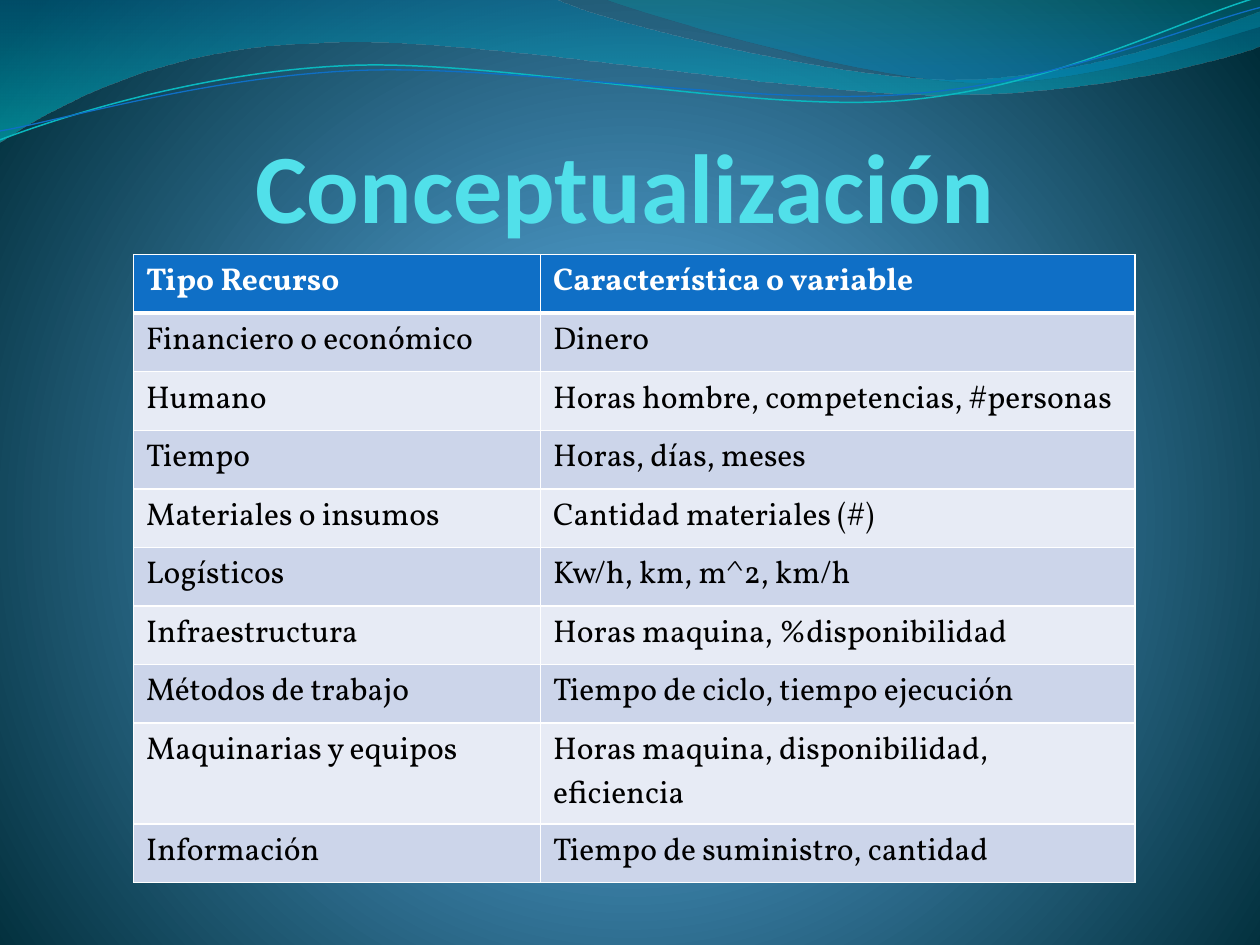
import math

from lxml import etree
from pptx import Presentation
from pptx import util as u
from pptx.dml.color import RGBColor
from pptx.enum import text as t
from pptx.oxml import ns

TITLE = "Conceptualización"
ROWS = [
    ("Tipo Recurso", "Característica o variable"),
    ("Financiero o económico", "Dinero"),
    ("Humano", "Horas hombre, competencias, #personas"),
    ("Tiempo", "Horas, días, meses"),
    ("Materiales o insumos", "Cantidad materiales (#)"),
    ("Logísticos", "Kw/h, km, m^2, km/h"),
    ("Infraestructura", "Horas maquina, %disponibilidad"),
    ("Métodos de trabajo", "Tiempo de ciclo, tiempo ejecución"),
    ("Maquinarias y equipos", "Horas maquina, disponibilidad, eficiencia"),
    ("Información", "Tiempo de suministro, cantidad"),
]
COLS, HEIGHT = (3.23, 4.72), 4.65
TALL = {8: 0.8}  # the row with two lines of text

THEME = {
    "title": {"name": "Calibri", "size": u.Pt(56), "bold": True, "color": "51E0EA"},
    "head": {"name": "Vollkorn", "size": u.Pt(18), "bold": True, "color": "FFFFFF"},
    "body": {"name": "Vollkorn", "size": u.Pt(18), "bold": False, "color": "000000"},
    "fills": {"head": "0F6FC6", "odd": "CCD5EA", "even": "E7EBF5"},
    "rule": "FFFFFF",
    "back": [(0, "4AA0D6", 100), (25, "4C98C7", 100), (100, "002C38", 100)],
}

# Each outline is a start point, then steps: one point for a line, three for a curve.
BANDS = [
    ([[(0, 0)], [(4.4, -0.01)],
      [(4.76, 0.17), (6.64, 0.63), (7.58, 0.63)],
      [(8.53, 0.63), (9.58, 0.26), (10, 0.09)], [(10.01, 0.36)],
      [(9.83, 0.44), (8.7, 0.76), (7.46, 0.75)],
      [(6.22, 0.75), (3.82, 0.28), (2.57, 0.34)],
      [(1.29, 0.36), (0.46, 0.83), (-0.01, 1.13)]],
     [(0, "0074A1", 45), (100, "00C6CF", 55)]),
    ([[(4.79, -0.01)], [(5.09, 0.11), (6.82, 0.62), (7.69, 0.65)],
      [(8.56, 0.69), (9.61, 0.32), (10, 0.21)], [(10, 0)]],
     [(0, "00A1A9", 30), (80, "008BBF", 45)]),
]
TILT = 357.3
LINES = [
    ([[(0, 1.11)], [(0.48, 0.93), (1.58, 0.57), (2.77, 0.52)],
      [(3.95, 0.47), (5.93, 0.89), (7.13, 0.8)],
      [(8.33, 0.71), (9.38, 0.15), (9.98, -0.02)]],
     (4.99, 0.57), "0AB8BF", 0.85),
    ([[(0, 1.04)], [(0.47, 0.96), (1.64, 0.61), (2.83, 0.56)],
      [(4.03, 0.51), (5.97, 0.84), (7.17, 0.75)],
      [(8.36, 0.67), (9.41, 0.21), (10, 0.06)]],
     (5, 0.59), "0F6FC6", 0.75),
]


def node(up, tag, **attrs):
    return etree.SubElement(up, ns.qn(tag), {k: str(v) for k, v in attrs.items()})


def blend(props, stops, center=None):
    """Swap the solid fill for a gradient: downward, or round if a center is given."""
    solid = props.find(ns.qn("a:solidFill"))
    grad = etree.Element(ns.qn("a:gradFill"), rotWithShape="1")
    group = node(grad, "a:gsLst")
    for pos, color, alpha in stops:
        tone = node(node(group, "a:gs", pos=pos * 1000), "a:srgbClr", val=color)
        if alpha < 100:
            node(tone, "a:alpha", val=alpha * 1000)
    if center:
        ring = node(grad, "a:path", path="circle")
        node(ring, "a:fillToRect", **{k: v * 1000 for k, v in center.items()})
    else:
        node(grad, "a:lin", ang=90 * 60000, scaled=1)
    props.replace(solid, grad)


def level(steps, mid):
    """Turn the points back around mid, so that the tilted shape lands on them."""
    turn = math.radians(-TILT)
    cos, sin = math.cos(turn), math.sin(turn)

    def spin(x, y):
        dx, dy = x - mid[0], y - mid[1]
        return mid[0] + dx * cos - dy * sin, mid[1] + dx * sin + dy * cos

    return [[spin(*pt) for pt in step] for step in steps]


def draw(slide, steps, close):
    """Build a freeform through the end points, then bend its curved steps."""
    steps = [[tuple(round(u.Inches(v)) for v in pt) for pt in step] for step in steps]
    ends = [step[-1] for step in steps]
    pen = slide.shapes.build_freeform(*ends[0])
    pen.add_line_segments(ends[1:], close=close)
    shape = pen.convert_to_shape()
    shape.shadow.inherit = False
    left, top = (min(axis) for axis in zip(*ends))
    parts = shape._element.findall(".//" + ns.qn("a:lnTo"))
    for part, step in zip(parts, steps[1:]):
        if len(step) == 3:
            curve = etree.Element(ns.qn("a:cubicBezTo"))
            for x, y in step:
                node(curve, "a:pt", x=x - left, y=y - top)
            part.getparent().replace(part, curve)
    return shape


def write(frame, words, style):
    run = frame.paragraphs[0].add_run()
    run.text = words
    for key, val in style.items():
        if key == "color":
            run.font.color.rgb = RGBColor.from_string(val)
        else:
            setattr(run.font, key, val)


def edge(cell, top, base):
    props = cell._tc.get_or_add_tcPr()
    widths = {"a:lnL": 1, "a:lnR": 1, "a:lnT": top, "a:lnB": base}
    for i, (tag, width) in enumerate(widths.items()):
        line = node(props, tag, w=u.Pt(width))
        node(node(line, "a:solidFill"), "a:srgbClr", val=THEME["rule"])
        props.insert(i, line)


def add_waves(slide):
    for steps, stops in BANDS:
        band = draw(slide, steps, True)
        band.line.fill.background()
        band.fill.solid()
        blend(band._element.spPr, stops)
    for steps, mid, color, width in LINES:
        wave = draw(slide, level(steps, mid), False)
        wave.rotation = TILT
        wave.fill.background()
        wave.line.color.rgb = RGBColor.from_string(color)
        wave.line.width = u.Pt(width)


def add_title(slide):
    box = slide.shapes.add_textbox(*map(u.Inches, (0.47, 0.68, 9, 1.25)))
    form = {"word_wrap": True, "vertical_anchor": t.MSO_ANCHOR.BOTTOM,
            "margin_left": 0, "margin_top": 0,
            "margin_right": u.Inches(0.02), "margin_bottom": 0}
    for key, val in form.items():
        setattr(box.text_frame, key, val)
    write(box.text_frame, TITLE, THEME["title"])
    box.text_frame.paragraphs[0].alignment = t.PP_ALIGN.CENTER


def add_grid(slide):
    place = (1.06, 2.02, sum(COLS), HEIGHT)
    grid = slide.shapes.add_table(len(ROWS), len(COLS), *map(u.Inches, place)).table
    for col, width in zip(grid.columns, COLS):
        col.width = u.Inches(width)
    for r, tall in TALL.items():
        grid.rows[r].height = u.Inches(tall)
    for r, row in enumerate(ROWS):
        kind = "head" if r == 0 else "odd" if r % 2 else "even"
        for c, words in enumerate(row):
            cell = grid.cell(r, c)
            cell.fill.solid()
            cell.fill.fore_color.rgb = RGBColor.from_string(THEME["fills"][kind])
            edge(cell, top=3 if r == 1 else 1, base=3 if r == 0 else 1)
            write(cell.text_frame, words, THEME["body" if r else "head"])


def main():
    deck = Presentation()
    deck.slide_width, deck.slide_height = u.Inches(10), u.Inches(7.5)
    slide = deck.slides.add_slide(deck.slide_layouts[6])
    slide.background.fill.solid()
    back = slide._element.find(".//" + ns.qn("p:bgPr"))
    blend(back, THEME["back"], {"l": 10, "t": 110, "r": 10, "b": 100})
    add_waves(slide)
    add_title(slide)
    add_grid(slide)
    deck.save("out.pptx")


if __name__ == "__main__":
    main()
